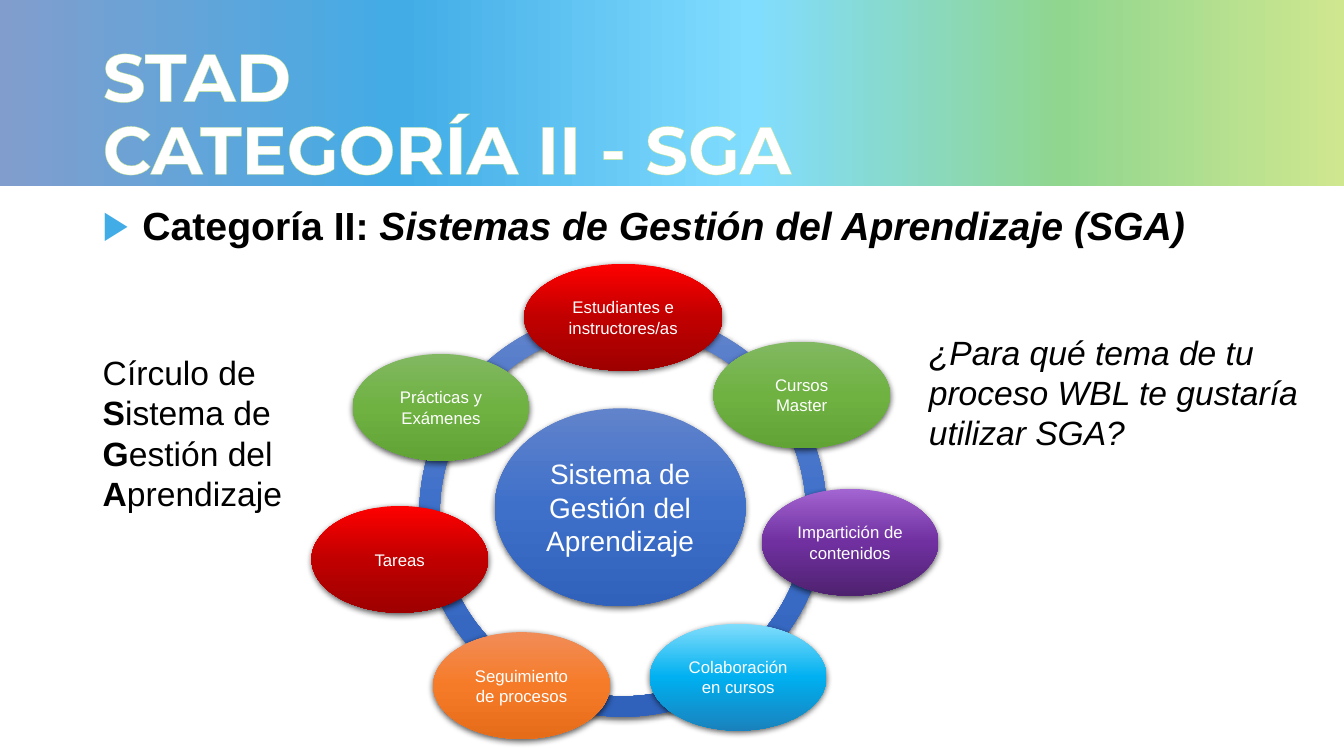
from dataclasses import dataclass

from lxml import etree
from pptx import Presentation
from pptx import util as u
from pptx.dml.color import RGBColor
from pptx.enum import shapes, text
from pptx.oxml import ns

COLORS = {"white": "FFFFFF", "black": "000000", "bullet": "42ACE6", "outline": "BFE38F"}
GRADIENTS = {
    "band": {0: "819DCD", 30: "42ACE6", 56: "81DDFF", 79: "90D68F", 100: "CFE78F"},
    "blue": {0: "6183CB", 50: "3E70CA", 100: "3062BB"},
    "red": {0: "FF0000", 50: "C00000", 100: "9E0000"},
    "green": {0: "81B861", 50: "6FB242", 100: "62A336"},
    "purple": {0: "A365D1", 50: "7030A0", 100: "4F2270"},
    "cyan": {0: "81DDFC", 50: "00B0F0", 100: "1982BD"},
    "orange": {0: "F18C57", 50: "F67B28", 100: "E56C19"},
}
MARGINS = ("margin_left", "margin_right", "margin_top", "margin_bottom")


@dataclass
class Node:
    label: str
    gradient: str
    left: float
    top: float
    width: float = 4.45
    height: float = 2.69
    size: int = 12
    kind: shapes.MSO_SHAPE = shapes.MSO_SHAPE.OVAL


@dataclass
class Span:
    words: str
    bold: bool = False
    italic: bool = False


@dataclass
class Box:
    left: float
    top: float
    width: float
    height: float
    size: int
    lines: list[list[Span]]
    wrap: bool = True
    font: str = "Arial"
    color: str = "black"


NODES = [
    Node("", "blue", 10.57, 7.8, 10.26, 10.26, kind=shapes.MSO_SHAPE.DONUT),
    Node("Sistema de Gestión del Aprendizaje", "blue", 12.47, 10.29, 6.32, 4.98, 20),
    Node("Estudiantes e instructores/as", "red", 13.21, 6.65, 5),
    Node("Cursos Master", "green", 17.98, 8.61),
    Node("Impartición de contenidos", "purple", 19.2, 12.32),
    Node("Colaboración en cursos", "cyan", 16.38, 15.72),
    Node("Seguimiento de procesos", "orange", 10.92, 15.93),
    Node("Tareas", "red", 7.85, 12.75),
    Node("Prácticas y Exámenes", "green", 8.89, 8.92),
]
TITLE = Box(2.34, 0.81, 29.21, 4.24, 48, [[Span("STAD", True)], [Span("CATEGORÍA II - SGA", True)]],
            font="Montserrat", color="white")
HEADING = Box(2.34, 5.08, 29.21, 1.6, 28, [[
    Span("Categoría II: ", True),
    Span("Sistemas de Gestión del Aprendizaje (SGA)", True, True),
]])
ACRONYM = Box(2.34, 8.74, 5.08, 4.37, 24, [
    [Span("Círculo de")],
    [Span("S", True), Span("istema de")],
    [Span("G", True), Span("estión del")],
    [Span("A", True), Span("prendizaje")],
], wrap=False)
QUESTION = Box(23.16, 8.23, 10.29, 3.33, 24, [
    [Span("¿Para qué tema de tu proceso WBL te gustaría utilizar SGA?", italic=True)],
])


def set_all(target, values: dict) -> None:
    for name, value in values.items():
        setattr(target, name, value)


def child(parent, tag: str, **attributes):
    element = etree.SubElement(parent, ns.qn(tag))
    for name, value in attributes.items():
        element.set(name, str(value))
    return element


def format_run(r, size: int, color: str, font: str = "Arial",
               bold: bool = False, italic: bool = False) -> None:
    set_all(r.font, {"size": u.Pt(size), "name": font, "bold": bold, "italic": italic})
    r.font.color.rgb = RGBColor.from_string(COLORS[color])


def paint(sp, gradient: str, angle: int) -> None:
    sp.shadow.inherit = False
    sp.line.fill.background()
    sp.fill.gradient()
    sp.fill.gradient_angle = angle
    stops = sp._element.spPr.find(".//" + ns.qn("a:gsLst"))
    for stop in list(stops):
        stops.remove(stop)
    for position, color in GRADIENTS[gradient].items():
        child(child(stops, "a:gs", pos=position * 1000), "a:srgbClr", val=color)


def cast_shadow(sp) -> None:
    effects = sp._element.spPr.find(ns.qn("a:effectLst"))
    shadow = child(effects, "a:outerShdw", blurRad=u.Pt(4.5), dist=u.Pt(1.5),
                   dir=5400000, algn="ctr", rotWithShape=0)
    child(child(shadow, "a:srgbClr", val=COLORS["black"]), "a:alpha", val=63000)


def draw_node(s, node: Node) -> None:
    sp = s.shapes.add_shape(node.kind, u.Cm(node.left), u.Cm(node.top),
                            u.Cm(node.width), u.Cm(node.height))
    paint(sp, node.gradient, 270)
    cast_shadow(sp)
    if node.kind == shapes.MSO_SHAPE.DONUT:
        sp.adjustments[0] = 0.05
    if node.label:
        tf = sp.text_frame
        set_all(tf, {"word_wrap": True, "vertical_anchor": text.MSO_ANCHOR.MIDDLE})
        set_all(tf, dict.fromkeys(MARGINS, u.Cm(0.23)))
        p = tf.paragraphs[0]
        p.alignment = text.PP_ALIGN.CENTER
        r = p.add_run()
        r.text = node.label
        format_run(r, node.size, "white")


def draw_box(s, box: Box):
    tf = s.shapes.add_textbox(u.Cm(box.left), u.Cm(box.top),
                              u.Cm(box.width), u.Cm(box.height)).text_frame
    tf.word_wrap = box.wrap
    for i, line in enumerate(box.lines):
        p = tf.add_paragraph() if i else tf.paragraphs[0]
        for span in line:
            r = p.add_run()
            r.text = span.words
            format_run(r, box.size, box.color, box.font, span.bold, span.italic)
    return tf


def draw_title(s) -> None:
    tf = draw_box(s, TITLE)
    tf.vertical_anchor = text.MSO_ANCHOR.MIDDLE
    for p in tf.paragraphs:
        p.line_spacing = 0.9
        for r in p.runs:
            line = etree.Element(ns.qn("a:ln"), w=str(u.Pt(0.75)))
            child(child(line, "a:solidFill"), "a:srgbClr", val=COLORS["outline"])
            r.font._element.insert(0, line)


def draw_heading(s) -> None:
    p = draw_box(s, HEADING).paragraphs[0]
    props = p._p.get_or_add_pPr()
    props.set("marL", str(u.Cm(1)))
    props.set("indent", str(u.Cm(-1)))
    child(child(props, "a:buClr"), "a:srgbClr", val=COLORS["bullet"])
    child(props, "a:buFont", typeface="Arial")
    child(props, "a:buChar", char="▶")
    p.line_spacing = 0.9


def main() -> None:
    prs = Presentation()
    set_all(prs, {"slide_width": u.Cm(33.87), "slide_height": u.Cm(19.05)})
    s = prs.slides.add_slide(prs.slide_layouts[6])
    band = s.shapes.add_shape(shapes.MSO_SHAPE.RECTANGLE, 0, u.Cm(-0.2), prs.slide_width, u.Cm(4.88))
    paint(band, "band", 0)
    draw_title(s)
    draw_heading(s)
    for node in NODES:
        draw_node(s, node)
    for box in (ACRONYM, QUESTION):
        draw_box(s, box).auto_size = text.MSO_AUTO_SIZE.SHAPE_TO_FIT_TEXT
    prs.save("out.pptx")


if __name__ == "__main__":
    main()
